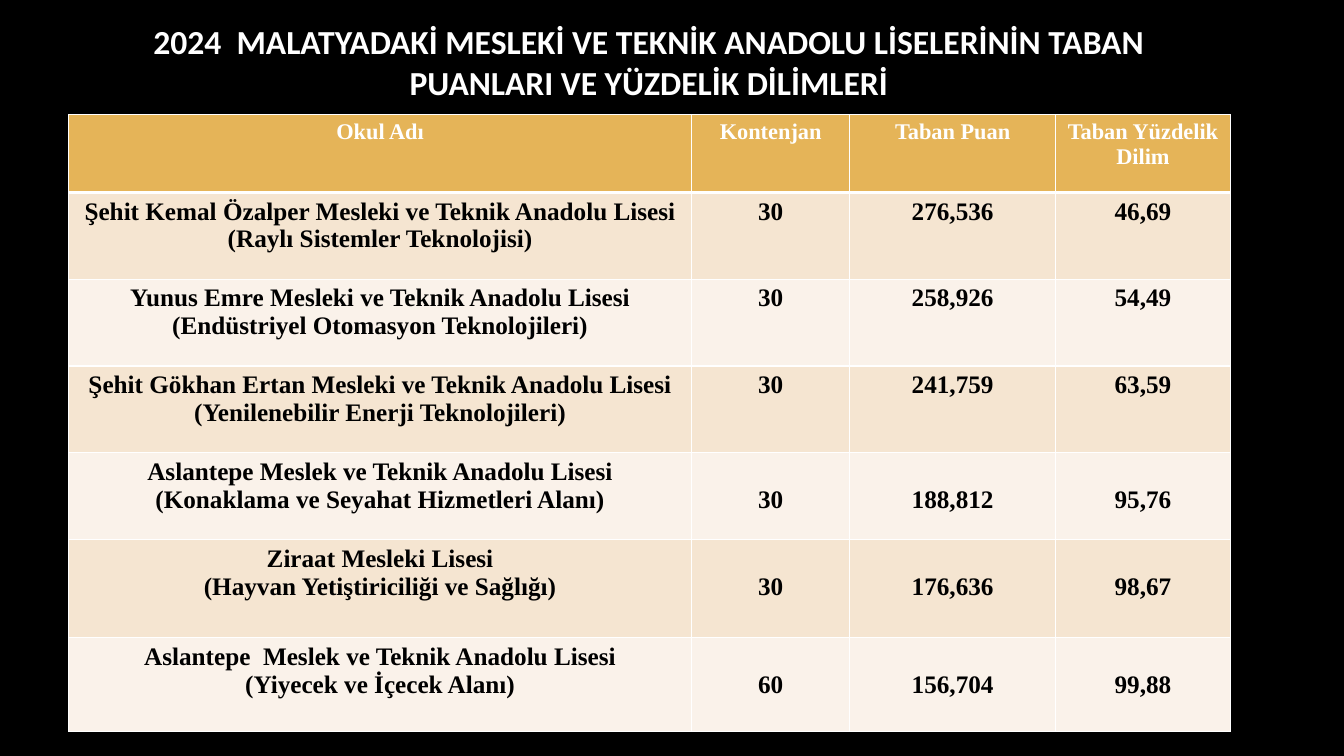
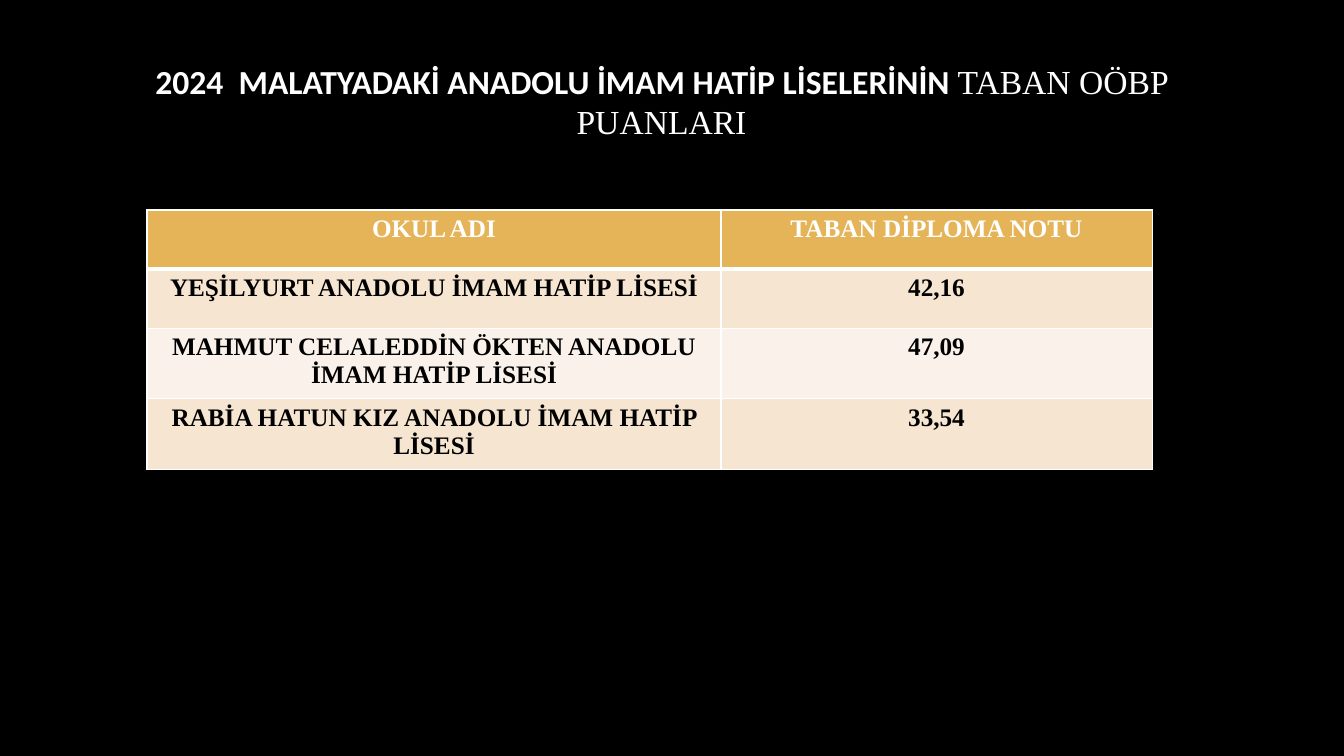
"""Build two slides of 2024 school entry scores for Malatya."""

from dataclasses import dataclass

import lxml.etree
import pptx
import pptx.dml.color
import pptx.enum.text
import pptx.oxml.ns
import pptx.slide
import pptx.table
import pptx.text.text
import pptx.util

BLACK = "000000"
WHITE = "FFFFFF"
GOLD = "E5B458"
BANDS = ("F5E5D1", "FAF2EA")
TITLE_FONT = "Calibri"
TABLE_FONT = "Times New Roman"
TITLE_SIZE = 24
BODY_SIZE = 18
TITLE_WIDTH = 769
TITLE_HEIGHT = 50
CELL_MARGIN = 3.6
LINE_STEP = 20
GRID_WIDTH = 1
HEADER_RULE_WIDTH = 3


@dataclass(frozen=True)
class Span:
    text: str
    font: str = TITLE_FONT
    bold: bool = True


@dataclass(frozen=True)
class Title:
    left: float
    top: float
    spans: tuple[Span, ...]


@dataclass(frozen=True)
class School:
    name: str
    values: tuple[str, ...]
    lowered: bool = False


@dataclass(frozen=True)
class ScoreTable:
    left: float
    top: float
    widths: tuple[float, ...]
    heights: tuple[float, ...]
    header: tuple[str, ...]
    header_size: float
    schools: tuple[School, ...]


@dataclass(frozen=True)
class Page:
    title: Title
    table: ScoreTable


PAGES = (
    Page(
        Title(79, 19, (
            Span("2024  MALATYADAKİ MESLEKİ VE TEKNİK ANADOLU LİSELERİNİN TABAN PUANLARI VE YÜZDELİK DİLİMLERİ"),
        )),
        ScoreTable(
            49, 82, (445, 113, 147, 125), (55.5, 62, 62, 62, 62, 70, 67),
            ("Okul Adı", "Kontenjan", "Taban Puan", "Taban Yüzdelik Dilim"), 16,
            (
                School("Şehit Kemal Özalper Mesleki ve Teknik Anadolu Lisesi\n(Raylı Sistemler Teknolojisi)",
                       ("30", "276,536", "46,69")),
                School("Yunus Emre Mesleki ve Teknik Anadolu Lisesi\n(Endüstriyel Otomasyon Teknolojileri)",
                       ("30", "258,926", "54,49")),
                School("Şehit Gökhan Ertan Mesleki ve Teknik Anadolu Lisesi\n(Yenilenebilir Enerji Teknolojileri)",
                       ("30", "241,759", "63,59")),
                School("Aslantepe Meslek ve Teknik Anadolu Lisesi\n(Konaklama ve Seyahat Hizmetleri Alanı)",
                       ("30", "188,812", "95,76"), True),
                School("Ziraat Mesleki Lisesi\n(Hayvan Yetiştiriciliği ve Sağlığı)",
                       ("30", "176,636", "98,67"), True),
                School("Aslantepe  Meslek ve Teknik Anadolu Lisesi\n(Yiyecek ve İçecek Alanı)",
                       ("60", "156,704", "99,88"), True),
            ),
        ),
    ),
    Page(
        Title(88, 47, (
            Span("2024  MALATYADAKİ ANADOLU İMAM HATİP LİSELERİNİN "),
            Span("TABAN OÖBP PUANLARI", TABLE_FONT, False),
        )),
        ScoreTable(
            105, 150, (410, 308), (42.2, 42.2, 47.2, 47.2),
            ("OKUL ADI", "TABAN DİPLOMA NOTU"), BODY_SIZE,
            (
                School("YEŞİLYURT ANADOLU İMAM HATİP LİSESİ", ("42,16",)),
                School("MAHMUT CELALEDDİN ÖKTEN ANADOLU İMAM HATİP LİSESİ", ("47,09",)),
                School("RABİA HATUN KIZ ANADOLU İMAM HATİP LİSESİ", ("33,54",)),
            ),
        ),
    ),
)


def rgb(value: str) -> pptx.dml.color.RGBColor:
    return pptx.dml.color.RGBColor.from_string(value)


def style_span(span: pptx.text.text._Run, font: str, size: float, color: str, bold: bool) -> None:
    span.font.name = font
    span.font.size = pptx.util.Pt(size)
    span.font.bold = bold
    span.font.color.rgb = rgb(color)


def add_title(slide: pptx.slide.Slide, title: Title) -> None:
    box = slide.shapes.add_textbox(
        *(pptx.util.Pt(value) for value in (title.left, title.top, TITLE_WIDTH, TITLE_HEIGHT)))
    frame = box.text_frame
    frame.word_wrap = True
    frame.vertical_anchor = pptx.enum.text.MSO_ANCHOR.MIDDLE
    para = frame.paragraphs[0]
    para.alignment = pptx.enum.text.PP_ALIGN.CENTER
    for part in title.spans:
        span = para.add_run()
        span.text = part.text
        style_span(span, part.font, TITLE_SIZE, WHITE, part.bold)


def add_borders(cell: pptx.table._Cell, top: float, bottom: float) -> None:
    properties = cell._tc.get_or_add_tcPr()
    widths = {"a:lnL": GRID_WIDTH, "a:lnR": GRID_WIDTH, "a:lnT": top, "a:lnB": bottom}
    for position, (tag, width) in enumerate(widths.items()):
        line = lxml.etree.Element(pptx.oxml.ns.qn(tag), w=str(pptx.util.Pt(width)))
        fill = lxml.etree.SubElement(line, pptx.oxml.ns.qn("a:solidFill"))
        lxml.etree.SubElement(fill, pptx.oxml.ns.qn("a:srgbClr"), val=WHITE)
        properties.insert(position, line)


def fill_cell(cell: pptx.table._Cell, text: str, size: float, color: str, fill: str,
              margin_top: float = CELL_MARGIN) -> None:
    cell.text_frame.text = text
    cell.margin_top = pptx.util.Pt(margin_top)
    cell.fill.solid()
    cell.fill.fore_color.rgb = rgb(fill)
    for para in cell.text_frame.paragraphs:
        para.alignment = pptx.enum.text.PP_ALIGN.CENTER
        for span in para.runs:
            style_span(span, TABLE_FONT, size, color, True)


def add_scores(slide: pptx.slide.Slide, scores: ScoreTable) -> None:
    place = (scores.left, scores.top, sum(scores.widths), sum(scores.heights))
    table = slide.shapes.add_table(
        len(scores.heights), len(scores.widths), *(pptx.util.Pt(value) for value in place)).table
    for column, width in zip(table.columns, scores.widths):
        column.width = pptx.util.Pt(width)
    for row, height in zip(table.rows, scores.heights):
        row.height = pptx.util.Pt(height)
    for column, label in enumerate(scores.header):
        cell = table.cell(0, column)
        fill_cell(cell, label, scores.header_size, WHITE, GOLD)
        add_borders(cell, GRID_WIDTH, HEADER_RULE_WIDTH)
    for row, school in enumerate(scores.schools, start=1):
        band = BANDS[(row - 1) % len(BANDS)]
        for column, text in enumerate((school.name, *school.values)):
            cell = table.cell(row, column)
            lowering = LINE_STEP if school.lowered and column else 0
            fill_cell(cell, text, BODY_SIZE, BLACK, band, CELL_MARGIN + lowering)
            add_borders(cell, HEADER_RULE_WIDTH if row == 1 else GRID_WIDTH, GRID_WIDTH)


def main() -> None:
    deck = pptx.Presentation()
    deck.slide_width = pptx.util.Pt(960)
    deck.slide_height = pptx.util.Pt(540)
    for page in PAGES:
        slide = deck.slides.add_slide(deck.slide_layouts[6])
        slide.background.fill.solid()
        slide.background.fill.fore_color.rgb = rgb(BLACK)
        add_title(slide, page.title)
        add_scores(slide, page.table)
    deck.save("out.pptx")


if __name__ == "__main__":
    main()
